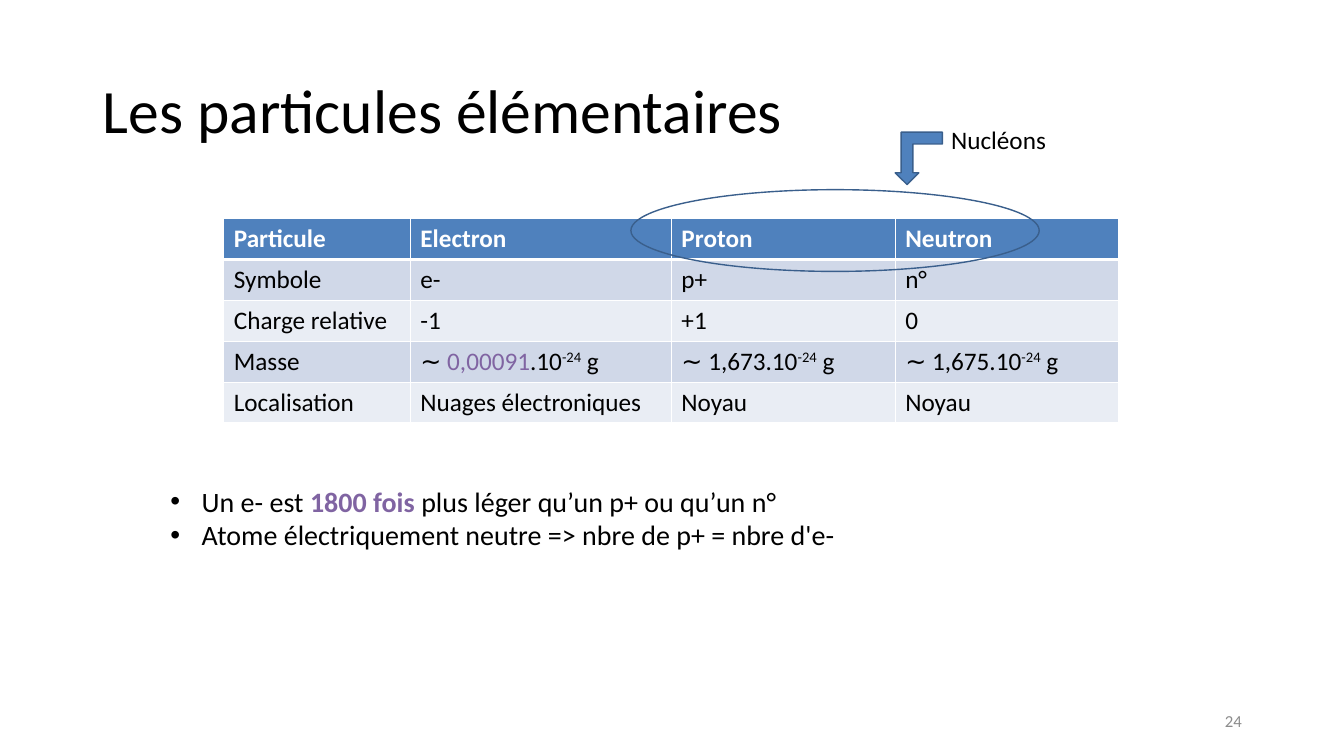
from lxml.etree import SubElement
from pptx import Presentation
from pptx.dml.color import RGBColor
from pptx.enum.shapes import MSO_SHAPE as Preset
from pptx.enum.text import MSO_ANCHOR as Anchor, MSO_AUTO_SIZE as AutoSize, PP_ALIGN as Align
from pptx.oxml.ns import qn
from pptx.util import Cm, Pt

BLACK = RGBColor(0x00, 0x00, 0x00)
WHITE = RGBColor(0xFF, 0xFF, 0xFF)
BLUE = RGBColor(0x4F, 0x81, 0xBD)
DARK_BLUE = RGBColor(0x3A, 0x5F, 0x8C)
PALE_BLUE = RGBColor(0xD0, 0xD8, 0xE8)
PALER_BLUE = RGBColor(0xE9, 0xED, 0xF4)
PURPLE = RGBColor(0x80, 0x64, 0xA2)
GREY = RGBColor(0x8C, 0x8C, 0x8C)

PURPLE_TEXT = {"color": PURPLE}
STRONG_TEXT = {"color": PURPLE, "bold": True}
EXPONENT = {"baseline": "30000"}


def mass(*value):
    return [("∼ ", {}), *value, (".10", {}), ("-24", EXPONENT), (" g", {})]


PARTICLES = [
    ["Particule", "Electron", "Proton", "Neutron"],
    ["Symbole", "e-", "p+", "n°"],
    ["Charge relative", "-1", "+1", "0"],
    ["Masse", mass(("0,00091", PURPLE_TEXT)), mass(("1,673", {})), mass(("1,675", {}))],
    ["Localisation", "Nuages électroniques", "Noyau", "Noyau"],
]
COLUMN_WIDTHS = [4.7, 6.58, 5.64, 5.64]
ROW_HEIGHT = 1.03

REMARKS = [
    [("Un e- est ", {}), ("1800 fois ", STRONG_TEXT), ("plus léger qu’un p+ ou qu’un n°", {})],
    "Atome électriquement neutre => nbre de p+ = nbre d'e-",
]


def apply(target, values):
    for key, value in values.items():
        setattr(target, key, value)


def place(shape, left, top, width, height):
    apply(shape, {"left": Cm(left), "top": Cm(top), "width": Cm(width), "height": Cm(height)})


def write(paragraph, content, size, color=BLACK, bold=False):
    pieces = [(content, {})] if isinstance(content, str) else content
    for wording, style in pieces:
        run = paragraph.add_run()
        run.text = wording
        apply(run.font, {"name": "Calibri", "size": Pt(size), "bold": style.get("bold", bold)})
        run.font.color.rgb = style.get("color", color)
        if "baseline" in style:
            run.font._element.set("baseline", style["baseline"])


def add_title(slide, wording):
    title = slide.shapes.title
    place(title, 2.34, 1.02, 29.21, 3.68)
    apply(title.text_frame, {"vertical_anchor": Anchor.MIDDLE, "auto_size": AutoSize.NONE})
    heading = title.text_frame.paragraphs[0]
    apply(heading, {"alignment": Align.LEFT, "line_spacing": 0.9})
    write(heading, wording, 44)


def add_remarks(slide, remarks):
    body = slide.placeholders[1]
    place(body, 4.04, 12.07, 26.67, 1.96)
    frame = body.text_frame
    frame.auto_size = AutoSize.NONE
    for index, remark in enumerate(remarks):
        paragraph = frame.add_paragraph() if index else frame.paragraphs[0]
        paragraph.space_before = Pt(0)
        write(paragraph, remark, 20)
        properties = paragraph._p.get_or_add_pPr()
        properties.set("marL", str(Cm(0.79)))
        properties.set("indent", str(-Cm(0.79)))
        SubElement(properties, qn("a:buFont"), typeface="Arial")
        SubElement(properties, qn("a:buChar"), char="•")


def add_label(slide, box, wording, size, color=BLACK, align=Align.LEFT, anchor=Anchor.TOP):
    label = slide.shapes.add_textbox(*map(Cm, box))
    apply(label.text_frame, {"word_wrap": True, "vertical_anchor": anchor})
    paragraph = label.text_frame.paragraphs[0]
    paragraph.alignment = align
    write(paragraph, wording, size, color)


def add_borders(cell, bottom_width):
    properties = cell._tc.get_or_add_tcPr()
    for side, width in {"L": 1, "R": 1, "T": 1, "B": bottom_width}.items():
        line = SubElement(properties, qn(f"a:ln{side}"), w=str(Pt(width)))
        color = SubElement(SubElement(line, qn("a:solidFill")), qn("a:srgbClr"))
        color.set("val", str(WHITE))


def add_particle_table(slide):
    size = Cm(sum(COLUMN_WIDTHS)), Cm(ROW_HEIGHT * len(PARTICLES))
    table = slide.shapes.add_table(
        len(PARTICLES), len(COLUMN_WIDTHS), Cm(5.64), Cm(5.51), *size).table
    for column, width in zip(table.columns, COLUMN_WIDTHS):
        column.width = Cm(width)
    for row_index, (row, contents) in enumerate(zip(table.rows, PARTICLES)):
        row.height = Cm(ROW_HEIGHT)
        header = row_index == 0
        band = BLUE if header else PALE_BLUE if row_index % 2 else PALER_BLUE
        for cell, content in zip(row.cells, contents):
            add_borders(cell, 3 if header else 1)
            cell.fill.solid()
            cell.fill.fore_color.rgb = band
            write(cell.text_frame.paragraphs[0], content, 18, WHITE if header else BLACK, header)


def add_outline(slide, preset, box, fill=None, rotation=0):
    shape = slide.shapes.add_shape(preset, *map(Cm, box))
    shape.shadow.inherit = False
    shape.rotation = rotation
    if fill is None:
        shape.fill.background()
    else:
        shape.fill.solid()
        shape.fill.fore_color.rgb = fill
    shape.line.color.rgb = DARK_BLUE
    shape.line.width = Pt(1)


def main():
    deck = Presentation()
    apply(deck, {"slide_width": Cm(33.87), "slide_height": Cm(19.05)})
    slide = deck.slides.add_slide(deck.slide_layouts[1])
    add_title(slide, "Les particules élémentaires")
    add_remarks(slide, REMARKS)
    add_particle_table(slide)
    add_outline(slide, Preset.OVAL, (15.9, 4.78, 10.29, 2.06))
    add_label(slide, (23.72, 3.02, 3.86, 1.02), "Nucléons", 18)
    add_outline(slide, Preset.BENT_UP_ARROW, (22.56, 3.33, 1.19, 1.32), BLUE, 180)
    add_label(slide, (23.93, 17.65, 7.62, 1.02), "24", 12, GREY, Align.RIGHT, Anchor.MIDDLE)
    deck.save("out.pptx")


if __name__ == "__main__":
    main()
